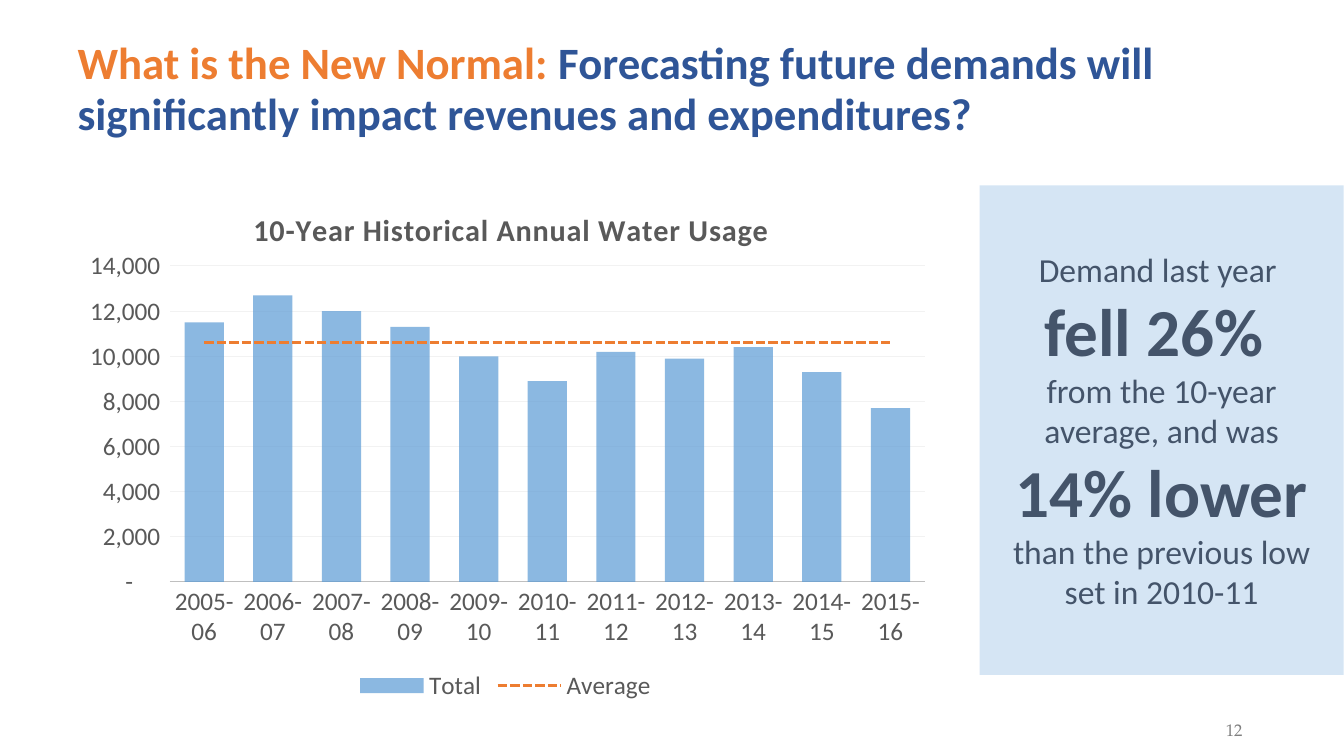
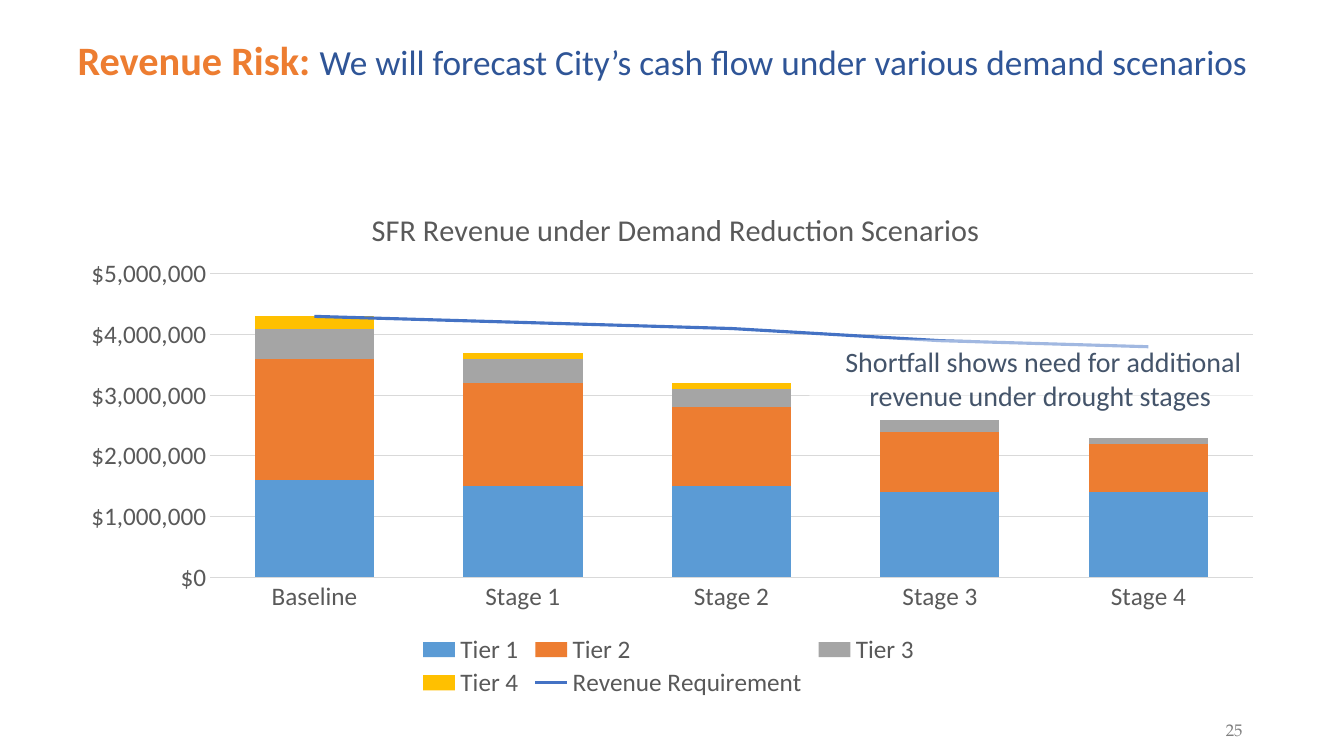
from lxml import etree
from pptx import Presentation
from pptx import util as u
from pptx.chart.data import CategoryChartData
from pptx.dml.color import RGBColor
from pptx.enum import chart as charts, dml, shapes, text
from pptx.oxml import parse_xml
from pptx.oxml.ns import nsdecls, qn

BODY_FONT = "Calibri"
NUMBER_FONT = "TeX Gyre Pagella"
ORANGE, NAVY, SLATE, SKY = "ED7D31", "2F5597", "44546A", "5B9BD5"
GREY_TEXT, GRID = "595959", "D9D9D9"
TITLE_ONLY = 5
LEFT, WIDTH = 1.7, 30.48
CHART_TOP, CHART_HEIGHT = 4.45, 13.34


def rgb(value):
    return RGBColor.from_string(value)


def box(*lengths):
    return [u.Cm(length) for length in lengths]


def style_font(font, size=None, color=None, bold=None, name=BODY_FONT):
    font.name = name
    if size:
        font.size = u.Pt(size)
    if color:
        font.color.rgb = rgb(color)
    if bold is not None:
        font.bold = bold


def set_opacity(element, percent):
    color = next(element.iter(qn("a:srgbClr")))
    etree.SubElement(color, qn("a:alpha")).set("val", str(percent * 1000))


def set_line(line, color, width=0.75):
    line.color.rgb = rgb(color)
    line.width = u.Pt(width)


def fill_paragraph(paragraph, runs, align):
    paragraph.alignment = align
    if len(runs) == 1:
        content, *style = runs[0]
        paragraph.add_run().text = content
        style_font(paragraph.font, *style)
        return
    for content, *style in runs:
        run = paragraph.add_run()
        run.text = content
        style_font(run.font, *style)


def add_slide(presentation, title_runs, number):
    slide = presentation.slides.add_slide(presentation.slide_layouts[TITLE_ONLY])
    title = slide.shapes.title
    title.left, title.top, title.width, title.height = box(LEFT, 0.84, WIDTH, 2.11)
    frame = title.text_frame
    frame.vertical_anchor = text.MSO_ANCHOR.TOP
    frame.auto_size = text.MSO_AUTO_SIZE.NONE
    paragraph = frame.paragraphs[0]
    paragraph.line_spacing = 0.95
    fill_paragraph(paragraph, title_runs, text.PP_ALIGN.LEFT)

    frame = slide.shapes.add_textbox(*box(29.95, 18.01, 2.31, 0.76)).text_frame
    frame.word_wrap = True
    frame.vertical_anchor = text.MSO_ANCHOR.BOTTOM
    frame.margin_left = frame.margin_right = u.Cm(0.13)
    paragraph = frame.paragraphs[0]
    paragraph.alignment = text.PP_ALIGN.CENTER
    paragraph.add_run().text = str(number)
    style_font(paragraph.font, 12, "808080", name=NUMBER_FONT)
    return slide


def add_panel(slide, place, color, opacity, paragraphs):
    panel = slide.shapes.add_shape(shapes.MSO_SHAPE.RECTANGLE, *box(*place))
    panel.shadow.inherit = False
    panel.fill.solid()
    panel.fill.fore_color.rgb = rgb(color)
    set_opacity(panel._element, opacity)
    panel.line.fill.background()
    frame = panel.text_frame
    frame.word_wrap = True
    frame.vertical_anchor = text.MSO_ANCHOR.MIDDLE
    for index, runs in enumerate(paragraphs):
        paragraph = frame.add_paragraph() if index else frame.paragraphs[0]
        fill_paragraph(paragraph, runs, text.PP_ALIGN.CENTER)


def move_last_series_to_line(chart):
    columns = chart.plots[0]._element
    series = columns.findall(qn("c:ser"))[-1]
    for flag in series.findall(qn("c:invertIfNegative")):
        series.remove(flag)
    line_plot = parse_xml(
        f'<c:lineChart {nsdecls("c")}><c:grouping val="standard"/>'
        '<c:varyColors val="0"/></c:lineChart>'
    )
    line_plot.append(series)
    etree.SubElement(line_plot, qn("c:marker")).set("val", "1")
    for axis in columns.findall(qn("c:axId")):
        etree.SubElement(line_plot, qn("c:axId")).set("val", axis.get("val"))
    columns.addnext(line_plot)
    return chart.plots[1].series[0]


def set_layout(parent, following, inner=False, **places):
    for old in parent.findall(qn("c:layout")):
        parent.remove(old)
    layout = parse_xml(f'<c:layout {nsdecls("c")}><c:manualLayout/></c:layout>')
    manual = layout[0]
    settings = {"layoutTarget": "inner"} if inner else {}
    settings.update(xMode="edge", yMode="edge", **places)
    for name, value in settings.items():
        etree.SubElement(manual, qn(f"c:{name}")).set("val", str(value))
    anchor = next(child for child in parent if child.tag in map(qn, following))
    anchor.addprevious(layout)


def style_axes(chart, axis_color, grid_color, number_format, maximum, step):
    for axis in (chart.category_axis, chart.value_axis):
        axis.major_tick_mark = axis.minor_tick_mark = charts.XL_TICK_MARK.NONE
        style_font(axis.tick_labels.font, 18, GREY_TEXT)
    set_line(chart.category_axis.format.line, axis_color)
    axis = chart.value_axis
    axis.format.line.fill.background()
    axis.has_major_gridlines = True
    set_line(axis.major_gridlines.format.line, grid_color)
    axis.minimum_scale, axis.maximum_scale, axis.major_unit = 0, maximum, step
    axis.tick_labels.number_format = number_format
    axis.tick_labels.number_format_is_linked = False


def add_chart_title(chart, title, x, bold, spacing):
    chart.has_title = True
    paragraph = chart.chart_title.text_frame.paragraphs[0]
    run = paragraph.add_run()
    run.text = title
    style_font(run.font, 21.6, GREY_TEXT, bold)
    run._r.get_or_add_rPr().set("spc", str(spacing))
    set_layout(chart.chart_title._element, ["c:overlay"], x=x, y=0.05)


def add_combined_chart(slide, kind, width, categories, series_values, colors, plot_place):
    data = CategoryChartData()
    data.categories = categories
    for name, values in series_values.items():
        data.add_series(name, values)
    place = box(LEFT, CHART_TOP, width, CHART_HEIGHT)
    chart = slide.shapes.add_chart(kind, *place, data).chart
    style_font(chart.font, 18, GREY_TEXT)
    line_series = move_last_series_to_line(chart)
    columns = chart.plots[0]
    columns.gap_width = 75
    columns.vary_by_categories = False
    for series, color in zip(columns.series, colors):
        series.format.fill.solid()
        series.format.fill.fore_color.rgb = rgb(color)
    line_series.smooth = False
    line_series.marker.style = charts.XL_MARKER_STYLE.NONE
    set_line(line_series.format.line, colors[-1], 2.25)
    chart.has_legend = True
    chart.legend.position = charts.XL_LEGEND_POSITION.BOTTOM
    chart.legend.include_in_layout = False
    style_font(chart.legend.font, 18, GREY_TEXT)
    plot_area = chart._chartSpace.chart.plotArea
    set_layout(plot_area, ["c:barChart"], inner=True, **plot_place)
    return chart


def build_water_usage(presentation):
    slide = add_slide(presentation, [
        ("What is the New Normal:", 32, ORANGE, True),
        (" Forecasting future demands will significantly impact revenues and expenditures?",
         32, NAVY, True),
    ], 12)
    years = [f"{year}-{(year + 1) % 100:02d}" for year in range(2005, 2016)]
    usage = [11500, 12700, 12000, 11300, 10000, 8900, 10200, 9900, 10400, 9300, 7700]
    chart = add_combined_chart(
        slide, charts.XL_CHART_TYPE.COLUMN_CLUSTERED, 22.07, years,
        {"Total": usage, "Average": [10600] * len(years)}, [SKY, ORANGE],
        dict(x=0.117, y=0.169, w=0.862, h=0.597),
    )
    set_opacity(chart.plots[0].series[0]._element, 70)
    chart.plots[1].series[0].format.line.dash_style = dml.MSO_LINE.SQUARE_DOT
    style_axes(chart, "BFBFBF", "F2F2F2",
               '_(* #,##0_);_(* \\(#,##0\\);_(* "-"??_);_(@_)', 14000, 2000)
    add_chart_title(chart, "10-Year Historical Annual Water Usage", 0.206, True, 50)
    add_panel(slide, (24.69, 4.67, 9.17, 12.34), SKY, 25, [
        [("Demand last year ", 24, SLATE)],
        [("fell 26% ", 48, SLATE, True)],
        [("from the 10-year average, and was", 24, SLATE)],
        [("14% lower ", 48, SLATE, True),
         ("than the previous low set in 2010-11", 24, SLATE, False)],
    ])


def build_revenue_risk(presentation):
    slide = add_slide(presentation, [
        ("Revenue Risk: ", 28.8, ORANGE, True),
        ("We will forecast City’s cash flow under various demand scenarios",
         25.2, NAVY, False),
    ], 25)
    chart = add_combined_chart(
        slide, charts.XL_CHART_TYPE.COLUMN_STACKED, WIDTH,
        ["Baseline"] + [f"Stage {stage}" for stage in range(1, 5)],
        {
            "Tier 1": [1600000, 1500000, 1500000, 1400000, 1400000],
            "Tier 2": [2000000, 1700000, 1300000, 1000000, 800000],
            "Tier 3": [500000, 400000, 300000, 200000, 100000],
            "Tier 4": [200000, 100000, 100000, 0, 0],
            "Revenue Requirement": [4300000, 4200000, 4100000, 3900000, 3800000],
        },
        [SKY, ORANGE, "A5A5A5", "FFC000", "4472C4"],
        dict(x=0.118, y=0.184, w=0.862, h=0.573),
    )
    chart.plots[0].overlap = 100
    style_axes(chart, GRID, GRID, '"$"#,##0', 5000000, 1000000)
    add_chart_title(chart, "SFR Revenue under Demand Reduction Scenarios", 0.247, False, 0)
    set_layout(chart.legend._element, ["c:overlay"], x=0.287, y=0.86, w=0.42, h=0.13)
    add_panel(slide, (20.4, 8.56, 11.79, 1.96), "FFFFFF", 50, [
        [("Shortfall shows need for additional revenue under drought stages ", 20, SLATE)],
    ])


def main():
    presentation = Presentation()
    presentation.slide_width, presentation.slide_height = box(33.87, 19.05)
    build_water_usage(presentation)
    build_revenue_risk(presentation)
    presentation.save("out.pptx")


if __name__ == "__main__":
    main()
